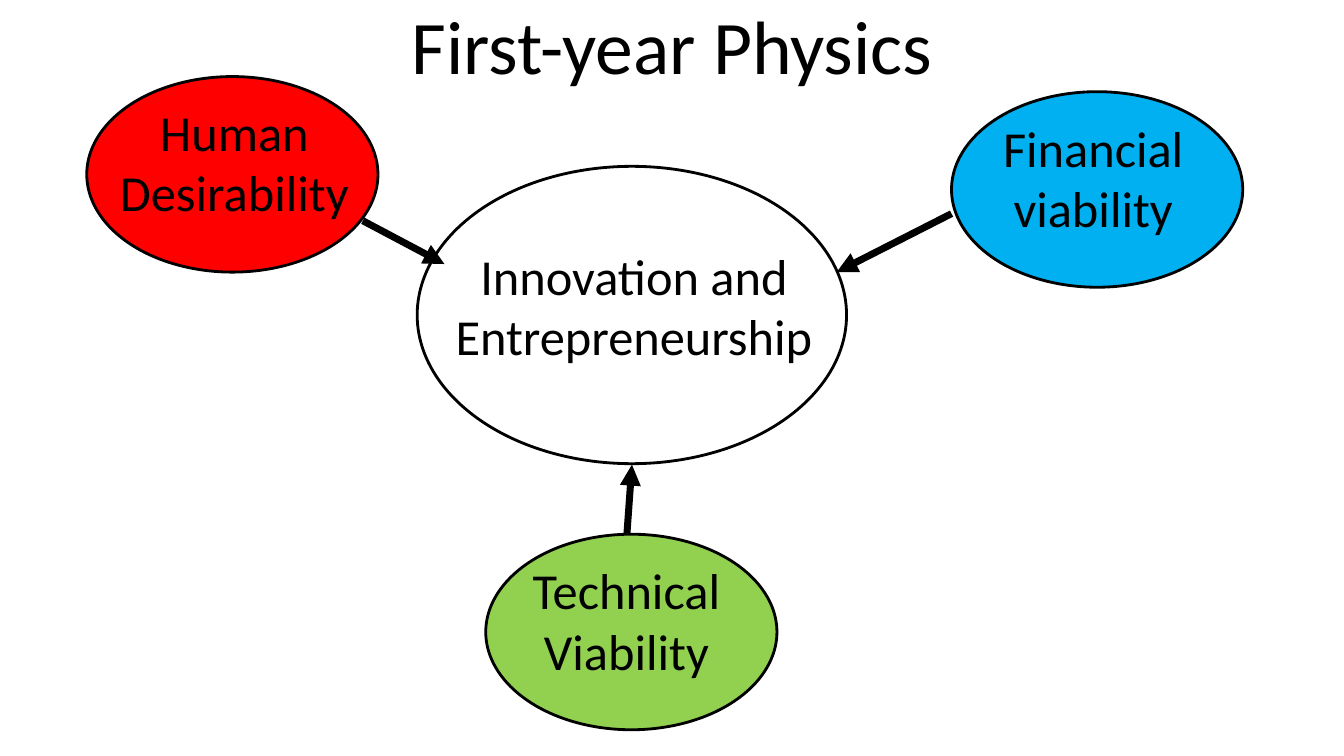
from dataclasses import dataclass

from lxml import etree
from pptx import Presentation
from pptx.dml.color import RGBColor
from pptx.enum.shapes import MSO_CONNECTOR, MSO_SHAPE
from pptx.enum.text import MSO_ANCHOR, MSO_AUTO_SIZE, PP_ALIGN
from pptx.oxml.ns import qn
from pptx.shapes.shapetree import GroupShapes, SlideShapes
from pptx.slide import Slide
from pptx.text.text import TextFrame
from pptx.util import Pt

OVAL = MSO_SHAPE.OVAL
STRAIGHT = MSO_CONNECTOR.STRAIGHT
CENTER = PP_ALIGN.CENTER
BOTTOM = MSO_ANCHOR.BOTTOM
NO_AUTOFIT = MSO_AUTO_SIZE.NONE
GROW_TO_TEXT = MSO_AUTO_SIZE.SHAPE_TO_FIT_TEXT

COLORS = {
    "ink": "000000",
    "hub": "FFFFFF",
    "human": "FF0000",
    "financial": "00B0F0",
    "technical": "92D050",
}
FONT = "Calibri"
TITLE_SIZE = 54
LABEL_SIZE = 36
LABEL_HEIGHT = 94.3
FACTOR_SIZE = (208, 139.7)
FACTOR_LABEL_WIDTH = 182.2


@dataclass(frozen=True)
class Factor:
    label: str
    color: str
    oval: tuple[float, float]
    label_at: tuple[float, float]


@dataclass(frozen=True)
class Arrow:
    start: tuple[float, float]
    end: tuple[float, float]


FACTORS = [
    Factor("Human Desirability", "human", (62, 54.7), (76.3, 68.4)),
    Factor("Financial viability", "financial", (679.7, 65.5), (689.8, 79.9)),
    Factor("Technical Viability", "technical", (347, 381.6), (356.4, 396)),
]
ARROWS = [
    Arrow((679.7, 152.6), (597.6, 194.4)),
    Arrow((259.2, 157.7), (317.5, 188.6)),
    Arrow((447.8, 381.6), (451.4, 331.9)),
]


def rgb(name: str) -> RGBColor:
    return RGBColor.from_string(COLORS[name])


def write_centered(frame: TextFrame, text: str, size: float) -> None:
    frame.text = text
    frame.word_wrap = True
    paragraph = frame.paragraphs[0]
    paragraph.alignment = CENTER
    font = paragraph.runs[0].font
    font.name = FONT
    font.size = Pt(size)
    font.color.rgb = rgb("ink")


def add_title(slide: Slide, text: str) -> None:
    title = slide.shapes.title
    title.left, title.top, title.width, title.height = Pt(120), Pt(0), Pt(720), Pt(68.4)
    write_centered(title.text_frame, text, TITLE_SIZE)
    title.text_frame.auto_size = NO_AUTOFIT
    title.text_frame.vertical_anchor = BOTTOM
    title.text_frame.paragraphs[0].line_spacing = 0.9


def add_oval(
    shapes: SlideShapes | GroupShapes,
    at: tuple[float, float],
    size: tuple[float, float],
    color: str,
) -> None:
    oval = shapes.add_shape(OVAL, *map(Pt, at + size))
    oval.shadow.inherit = False
    oval.fill.solid()
    oval.fill.fore_color.rgb = rgb(color)
    oval.line.color.rgb = rgb("ink")
    oval.line.width = Pt(2)


def add_label(
    shapes: SlideShapes | GroupShapes, text: str, at: tuple[float, float], width: float
) -> None:
    label = shapes.add_textbox(*map(Pt, at + (width, LABEL_HEIGHT)))
    write_centered(label.text_frame, text, LABEL_SIZE)
    label.text_frame.auto_size = GROW_TO_TEXT


def add_factor(slide: Slide, factor: Factor) -> None:
    group = slide.shapes.add_group_shape()
    add_oval(group.shapes, factor.oval, FACTOR_SIZE, factor.color)
    add_label(group.shapes, factor.label, factor.label_at, FACTOR_LABEL_WIDTH)


def add_arrow(slide: Slide, arrow: Arrow) -> None:
    connector = slide.shapes.add_connector(STRAIGHT, *map(Pt, arrow.start + arrow.end))
    connector.line.color.rgb = rgb("ink")
    connector.line.width = Pt(5)
    properties = connector.line._get_or_add_ln()
    etree.SubElement(properties, qn("a:tailEnd"), type="triangle")
    etree.SubElement(connector._element.spPr, qn("a:effectLst"))


def main() -> None:
    presentation = Presentation()
    presentation.slide_width, presentation.slide_height = Pt(960), Pt(540)
    slide = presentation.slides.add_slide(presentation.slide_layouts[5])
    add_title(slide, "First-year Physics")
    add_oval(slide.shapes, (298, 118.8), (306.7, 212.4), "hub")
    for factor in FACTORS:
        add_factor(slide, factor)
    for arrow in ARROWS:
        add_arrow(slide, arrow)
    add_label(slide.shapes, "Innovation and Entrepreneurship", (317.5, 171.4), 270.7)
    presentation.save("out.pptx")


if __name__ == "__main__":
    main()
